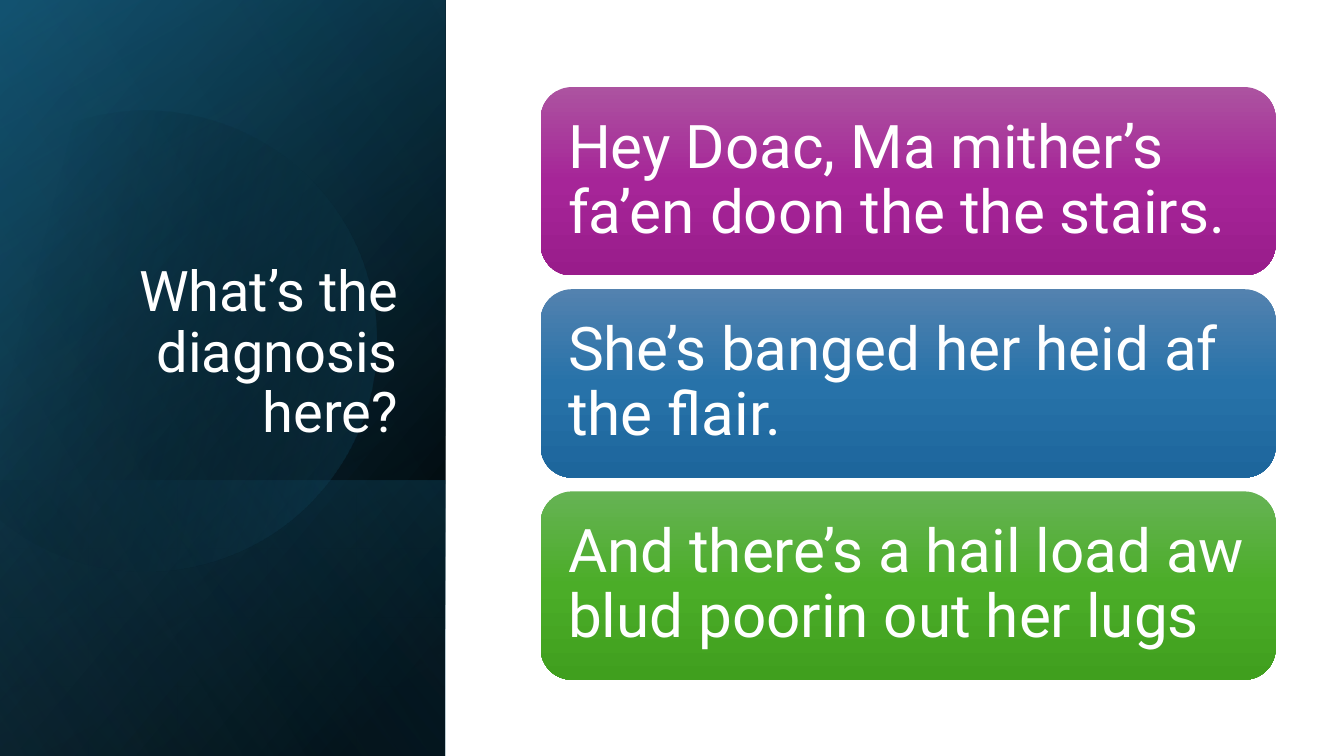
from math import cos, radians, sin, tan

from lxml import etree
from pptx import Presentation
from pptx import util as u
from pptx.dml import color
from pptx.enum import shapes, text
from pptx.oxml import ns

FONT = "Roboto"
WHITE = "FFFFFF"
CARDS = [
    ("Hey Doac, Ma mither’s fa’en doon the the stairs.",
     ["AC53A0", "A62598", "991C8B"]),
    ("She’s banged her heid af the flair.",
     ["5382AF", "2772A9", "1D669C"]),
    ("And there’s a hail load aw blud poorin out her lugs",
     ["66B354", "4BAD28", "409F1E"]),
]


def hue(code):
    """Turn a hex string into a colour."""
    return color.RGBColor.from_string(code)


def shade(shape, stops, angle):
    """Fill a shape with a gradient of (place, hex, opacity) stops."""
    shape.shadow.inherit = False
    shape.line.fill.background()
    shape.fill.background()
    props = shape._element.spPr
    grad = etree.Element(ns.qn("a:gradFill"), rotWithShape="1")
    ramp = etree.SubElement(grad, ns.qn("a:gsLst"))
    for place, code, solid in stops:
        stop = etree.SubElement(ramp, ns.qn("a:gs"), pos=str(place * 1000))
        tint = etree.SubElement(stop, ns.qn("a:srgbClr"), val=code)
        if solid < 100:
            etree.SubElement(tint, ns.qn("a:alpha"), val=str(solid * 1000))
    etree.SubElement(grad, ns.qn("a:lin"), ang=str(angle * 60000), scaled="0")
    props.replace(props.find(ns.qn("a:noFill")), grad)


def write(shape, words, size, anchor, align):
    """Set white wrapped text in a shape."""
    frame = shape.text_frame
    frame.word_wrap = True
    frame.vertical_anchor = anchor
    frame.text = words
    para = frame.paragraphs[0]
    para.alignment = align
    para.line_spacing = 0.9
    font = para.runs[0].font
    font.name, font.size, font.color.rgb = FONT, u.Pt(size), hue(WHITE)


def sheet(slide, x, y, w, h, stops, angle):
    """Cover a box with a flipped rectangle on its side."""
    left, top = x + (w - h) / 2, y + (h - w) / 2
    shape = slide.shapes.add_shape(
        shapes.MSO_SHAPE.RECTANGLE, u.Pt(left), u.Pt(top), u.Pt(h), u.Pt(w))
    shape.rotation = 90
    shape._element.spPr.xfrm.set("flipH", "1")
    shade(shape, stops, angle)


def curve(shape):
    """Turn each three straight segments of an outline into one curve."""
    lines = list(shape._element.iter(ns.qn("a:lnTo")))
    for i in range(0, len(lines), 3):
        bend = etree.Element(ns.qn("a:cubicBezTo"))
        lines[i].addprevious(bend)
        for line in lines[i:i + 3]:
            bend.append(line[0])
            line.getparent().remove(line)


def disc(slide, x, y, size):
    """Draw a glowing disc cut off on its left side."""
    r = size / 2

    def spot(angle, pull=0):
        """Give a point on the rim, pulled along its tangent."""
        c, s = cos(radians(angle)), sin(radians(angle))
        return x + r + r * (c - pull * s), y + r + r * (s + pull * c)

    turns = [242, 270, 360, 450, 510]
    rim = []
    for a, b in zip(turns, turns[1:]):
        pull = 4 / 3 * tan(radians(b - a) / 4)
        rim += [spot(a, pull), spot(b, -pull), spot(b)]
    form = slide.shapes.build_freeform(*spot(turns[0]), scale=u.Pt(1))
    form.add_line_segments(rim, close=True)
    shape = form.convert_to_shape()
    curve(shape)
    shape.rotation = 343.9
    shade(shape, [(29, "000000", 0), (100, "156082", 43)], 30)


def panel(slide, x, y, w, h):
    """Draw the dark side panel with its title."""
    sheet(slide, x, y, w, h, [(8, "000000", 100), (100, "104862", 100)], 50)
    sheet(slide, x, y, w, h, [(0, "000000", 0), (99, "156082", 46)], 30)
    low = 197
    sheet(slide, x, y + h - low, w, low,
          [(2, "156082", 29), (100, "000000", 30)], 130)
    disc(slide, x - 61.5, y + 76.3, 329)
    sheet(slide, x, y, w, h, [(0, "000000", 0), (99, "46B1E1", 11)], 120)
    title = slide.shapes.add_textbox(
        u.Pt(x + 46), u.Pt(y + 132.8), u.Pt(w - 72.7), u.Pt(188.6))
    write(title, "What’s the diagnosis here?", 40,
          text.MSO_ANCHOR.BOTTOM, text.PP_ALIGN.RIGHT)


def stack(slide, x, y, w, h, gap):
    """Stack the quote cards evenly in a box."""
    tall = (h - gap * (len(CARDS) - 1)) / len(CARDS)
    for i, (words, codes) in enumerate(CARDS):
        card = slide.shapes.add_shape(
            shapes.MSO_SHAPE.ROUNDED_RECTANGLE, u.Pt(x),
            u.Pt(y + i * (tall + gap)), u.Pt(w), u.Pt(tall))
        shade(card, [(50 * k, c, 100) for k, c in enumerate(codes)], 90)
        frame = card.text_frame
        frame.margin_left = frame.margin_right = u.Pt(13)
        frame.margin_top = frame.margin_bottom = u.Pt(13)
        write(card, words, 43, text.MSO_ANCHOR.MIDDLE, text.PP_ALIGN.LEFT)


def main():
    """Build and save the slide."""
    deck = Presentation()
    deck.slide_width, deck.slide_height = u.Pt(960), u.Pt(540)
    slide = deck.slides.add_slide(deck.slide_layouts[6])
    panel(slide, 0, 0, 318, 540)
    stack(slide, 386.2, 62.2, 525, 423.4, 9.8)
    deck.save("out.pptx")


if __name__ == "__main__":
    main()
